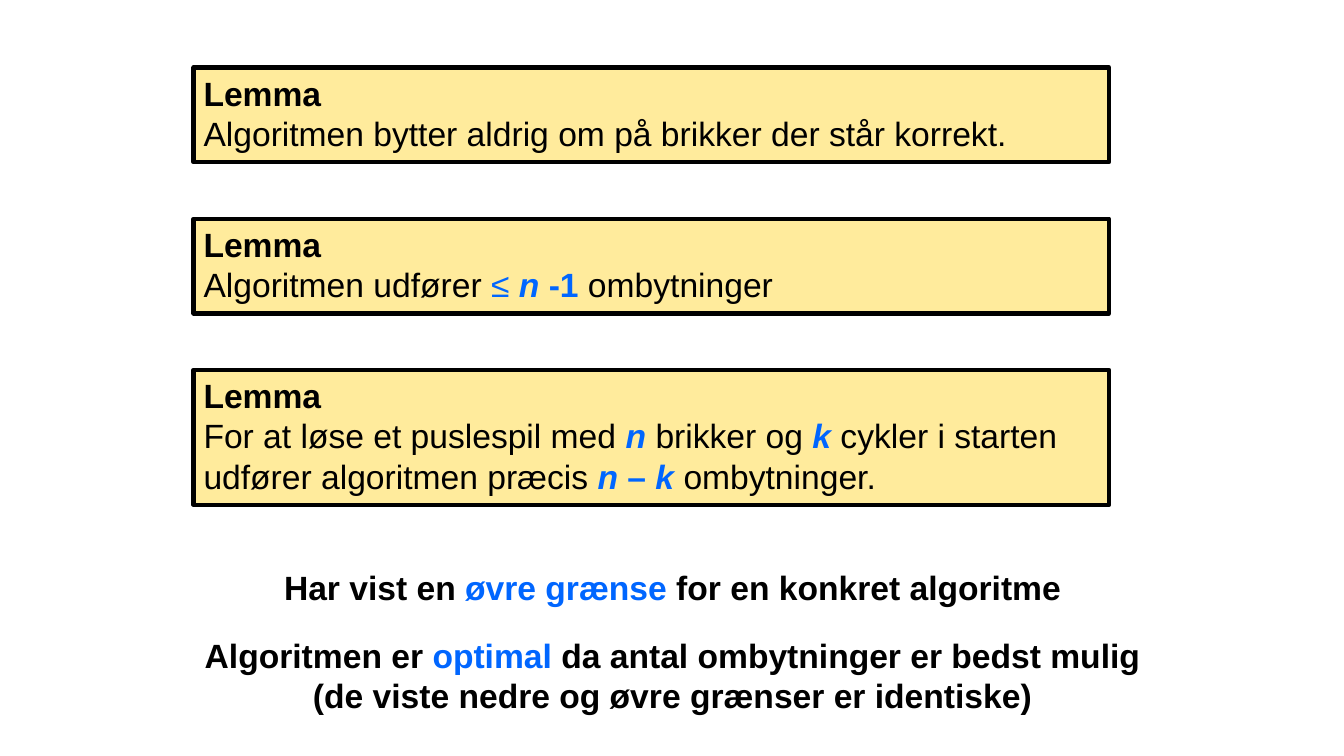
from dataclasses import dataclass

from lxml.etree import SubElement
from pptx import Presentation
from pptx.dml.color import RGBColor
from pptx.enum.shapes import MSO_SHAPE as Shape
from pptx.enum.text import MSO_ANCHOR as Anchor, MSO_AUTO_SIZE as AutoSize, PP_ALIGN as Align
from pptx.oxml.ns import qn
from pptx.util import Inches, Pt

COLORS = {"text": "000000", "accent": "0066FF", "lemma": "FFCC00"}
LEMMA_OPACITY = 39  # percent
LEMMA_LEFT, LEMMA_WIDTH = 1.92, 9.08
LEMMA_TOP, LEMMA_STEP = 0.67, 1.5
REMARK_LEFT, REMARK_WIDTH = 1.67, 10


@dataclass(frozen=True)
class Span:
    text: str
    color: str = "text"
    bold: bool = False
    italic: bool = False


@dataclass(frozen=True)
class Lemma:
    height: float
    spans: list[Span]


@dataclass(frozen=True)
class Remark:
    top: float
    height: float
    spans: list[Span]


def symbol(text: str) -> Span:
    return Span(text, "accent", bold=True, italic=True)


def strong(text: str, color: str = "text") -> Span:
    return Span(text, color, bold=True)


LEMMAS = [
    Lemma(0.94, [Span("Algoritmen bytter aldrig om på brikker der står korrekt.")]),
    Lemma(0.94, [
        Span("Algoritmen udfører "), Span("≤ ", "accent"), symbol("n"),
        strong(" -1", "accent"), Span(" ombytninger"),
    ]),
    Lemma(1.34, [
        Span("For at løse et puslespil med "), symbol("n "),
        Span("brikker og "), symbol("k "),
        Span("cykler i starten udfører algoritmen præcis "),
        symbol("n "), strong("–", "accent"), symbol(" k "),
        Span("ombytninger."),
    ]),
]

REMARKS = [
    Remark(5.58, 0.5, [
        strong("Har vist en "), strong("øvre grænse", "accent"),
        strong(" for en konkret algoritme"),
    ]),
    Remark(6.25, 0.91, [
        strong("Algoritmen er "), strong("optimal ", "accent"),
        strong("da antal ombytninger er bedst mulig "
               "(de viste nedre og øvre grænser er identiske)"),
    ]),
]


def rgb(name: str) -> RGBColor:
    return RGBColor.from_string(COLORS[name])


def write_paragraphs(box, paragraphs: list[list[Span]], align: Align) -> None:
    frame = box.text_frame
    frame.word_wrap = True
    frame.auto_size = AutoSize.SHAPE_TO_FIT_TEXT
    frame.vertical_anchor = Anchor.TOP
    for index, spans in enumerate(paragraphs):
        para = frame.add_paragraph() if index else frame.paragraphs[0]
        para.alignment = align
        para.font.name = "Arial"
        para.font.size = Pt(24)
        for span in spans:
            run = para.add_run()
            run.text = span.text
            run.font.bold = span.bold
            run.font.italic = span.italic
            run.font.color.rgb = rgb(span.color)


def add_lemma(page, lemma: Lemma, top: float) -> None:
    box = page.shapes.add_shape(
        Shape.RECTANGLE, Inches(LEMMA_LEFT), Inches(top),
        Inches(LEMMA_WIDTH), Inches(lemma.height))
    box.shadow.inherit = False
    box.fill.solid()
    box.fill.fore_color.rgb = rgb("lemma")
    fill_color = box._element.spPr.find(qn("a:solidFill"))[0]
    SubElement(fill_color, qn("a:alpha"), val=str(LEMMA_OPACITY * 1000))
    box.line.color.rgb = rgb("text")
    box.line.width = Pt(3)
    write_paragraphs(box, [[strong("Lemma")], lemma.spans], Align.LEFT)


def add_remark(page, remark: Remark) -> None:
    box = page.shapes.add_textbox(
        Inches(REMARK_LEFT), Inches(remark.top),
        Inches(REMARK_WIDTH), Inches(remark.height))
    write_paragraphs(box, [remark.spans], Align.CENTER)


def main() -> None:
    deck = Presentation()
    deck.slide_width, deck.slide_height = Inches(13.33), Inches(7.5)
    page = deck.slides.add_slide(deck.slide_layouts[6])
    for index, lemma in enumerate(LEMMAS):
        add_lemma(page, lemma, LEMMA_TOP + index * LEMMA_STEP)
    for remark in REMARKS:
        add_remark(page, remark)
    deck.save("out.pptx")


if __name__ == "__main__":
    main()
